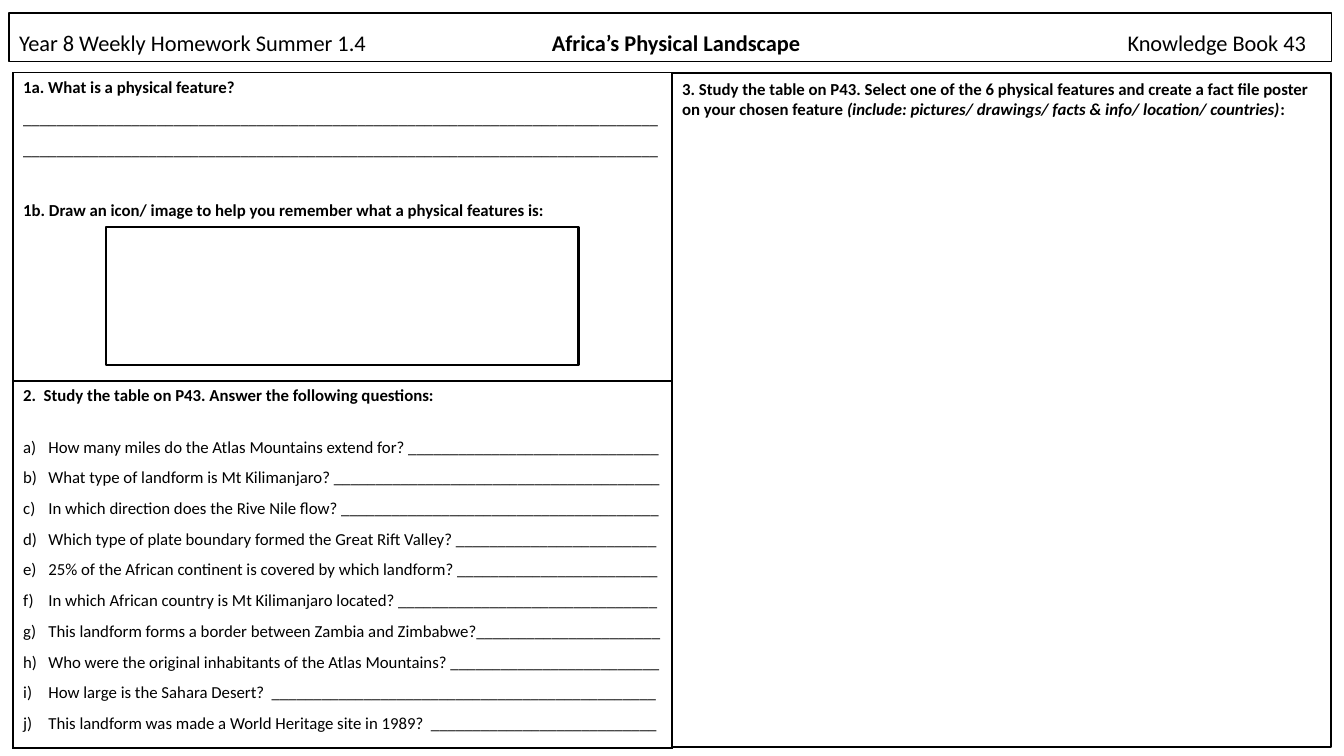
from lxml import etree
from pptx import Presentation
from pptx import util as u
from pptx.dml.color import RGBColor
from pptx.enum import shapes, text
from pptx.oxml.ns import qn

# Content: each run is (text, style), with b for bold and i for italic
HEADER = [("Year 8 Weekly Homework Summer 1.4\t", ""),
          ("Africa’s Physical Landscape\t", "b"),
          ("Knowledge Book 43", "")]
FEATURE = "1a. What is a physical feature?"
ICON = "1b. Draw an icon/ image to help you remember what a physical features is:"
STUDY = "2.  Study the table on P43. Answer the following questions:"
QUESTIONS = [  # question, length of its answer line in underscores
    ("How many miles do the Atlas Mountains extend for? ", 30),
    ("What type of landform is Mt Kilimanjaro? ", 39),
    ("In which direction does the Rive Nile flow? ", 38),
    ("Which type of plate boundary formed the Great Rift Valley? ", 24),
    ("25% of the African continent is covered by which landform? ", 24),
    ("In which African country is Mt Kilimanjaro located? ", 31),
    ("This landform forms a border between Zambia and Zimbabwe?", 22),
    ("Who were the original inhabitants of the Atlas Mountains? ", 25),
    ("How large is the Sahara Desert?  ", 46),
    ("This landform was made a World Heritage site in 1989?  ", 27),
]
POSTER = [("3. Study the table on P43. Select one of the 6 physical features and "
           "create a fact file poster on your chosen feature ", "b"),
          ("(include: pictures/ drawings/ facts & info/ location/ countries)", "bi"),
          (":", "b")]

THEME = {"font": "Calibri", "ink": RGBColor(0, 0, 0), "paper": RGBColor(255, 255, 255),
         "title": 16, "body": 12, "thin": 1, "thick": 1.5}

# Layout in centimetres
LEFT, TOP, COL_W = 0.33, 1.83, 16.61
ROWS = [7.77, 9.25]
RIGHT = LEFT + COL_W
ANSWER_LINES, LINE_CHARS = 2, 76


def add_text(tf, runs, size=THEME["body"], spacing=1.0, before=0, numbered=False, tabs=()):
    """Add one formatted paragraph, using the first one while it is still empty."""
    first = tf.paragraphs[0]
    p = tf.add_paragraph() if first.runs else first
    p.alignment = text.PP_ALIGN.LEFT
    p.line_spacing, p.space_before = spacing, u.Pt(before)
    pPr = p._p.get_or_add_pPr()
    if numbered:
        pPr.set("marL", str(u.Cm(0.635)))
        pPr.set("indent", str(u.Cm(-0.635)))
        etree.SubElement(pPr, qn("a:buAutoNum"), type="alphaLcParenR")
    if tabs:
        stops = etree.SubElement(pPr, qn("a:tabLst"))
        for pos, align in tabs:
            etree.SubElement(stops, qn("a:tab"), pos=str(u.Cm(pos)), algn=align)
    for words, style in runs:
        r = p.add_run()
        r.text = words
        r.font.name, r.font.size = THEME["font"], u.Pt(size)
        r.font.bold, r.font.italic = "b" in style, "i" in style
        r.font.color.rgb = THEME["ink"]


def add_box(slide, x, y, w, h, line, filled=True):
    sp = slide.shapes.add_shape(shapes.MSO_SHAPE.RECTANGLE, *map(u.Cm, (x, y, w, h)))
    sp.shadow.inherit = False
    if filled:
        sp.fill.solid()
        sp.fill.fore_color.rgb = THEME["paper"]
    else:
        sp.fill.background()
    sp.line.color.rgb, sp.line.width = THEME["ink"], u.Pt(line)
    return sp


def style_cell(cell):
    tcPr = cell._tc.get_or_add_tcPr()
    for side in ("lnL", "lnR", "lnT", "lnB"):
        ln = etree.SubElement(tcPr, qn("a:" + side), w=str(u.Pt(THEME["thin"])))
        fill = etree.SubElement(ln, qn("a:solidFill"))
        etree.SubElement(fill, qn("a:srgbClr"), val=str(THEME["ink"]))
    cell.fill.background()


prs = Presentation()
prs.slide_width, prs.slide_height = u.Cm(33.87), u.Cm(19.05)
slide = prs.slides.add_slide(prs.slide_layouts[6])

# Header bar
tf = add_box(slide, 0.23, 0.33, 33.32, 1.22, THEME["thin"]).text_frame
tf.vertical_anchor = text.MSO_ANCHOR.BOTTOM
add_text(tf, HEADER, size=THEME["title"], spacing=0.9, tabs=[(16.56, "ctr"), (32.44, "r")])

# Questions 1 and 2
table = slide.shapes.add_table(len(ROWS), 1, u.Cm(LEFT), u.Cm(TOP),
                               u.Cm(COL_W), u.Cm(sum(ROWS))).table
table.first_row = table.horz_banding = False
for i, height in enumerate(ROWS):
    table.rows[i].height = u.Cm(height)
    style_cell(table.cell(i, 0))

tf = table.cell(0, 0).text_frame
add_text(tf, [(FEATURE, "b")])
add_text(tf, [("_" * LINE_CHARS * ANSWER_LINES, "")], spacing=1.5)
add_text(tf, [(ICON, "b")], spacing=1.5, before=22)

tf = table.cell(1, 0).text_frame
add_text(tf, [(STUDY, "b")])
for i, (question, blanks) in enumerate(QUESTIONS):
    add_text(tf, [(question + "_" * blanks, "")], spacing=1.5,
             before=0 if i else 14.6, numbered=True)

# Question 3 with its poster area
add_box(slide, RIGHT, TOP, COL_W, 16.99, THEME["thick"])
tf = slide.shapes.add_textbox(u.Cm(RIGHT), u.Cm(1.85), u.Cm(COL_W), u.Cm(1.27)).text_frame
tf.word_wrap = True
add_text(tf, POSTER)

# Drawing box for 1b
add_box(slide, 2.67, 5.72, 11.91, 3.48, THEME["thick"], filled=False)

prs.save("out.pptx")
